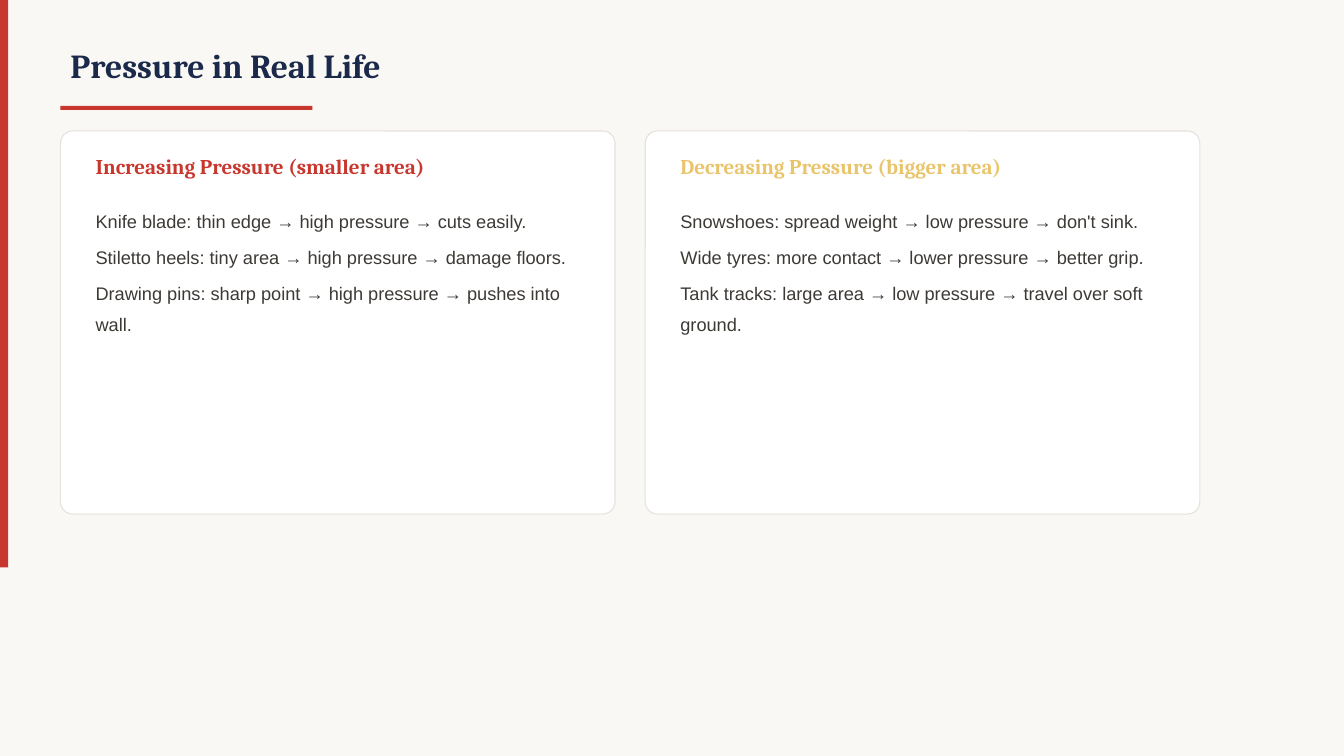
import pptx
import pptx.dml.color
import pptx.enum.shapes
import pptx.enum.text
import pptx.util

CELL = 0.05
LEFT = 12
CARD_TOP = 26
CARD_WIDTH = 110
CARD_HEIGHT = 76
CARD_GAP = 7 - 1
CARD_PAD = 5
RED = "C8372D"

TITLE = {"name": "Cambria", "size": pptx.util.Pt(24), "bold": True}
HEADING = {"name": "Cambria", "size": pptx.util.Pt(15), "bold": True}
BODY = {"name": "Arial", "size": pptx.util.Pt(13)}
BODY_SPACING = {"line_spacing": 1.4, "space_after": pptx.util.Pt(4)}

CARDS = [
    ("Increasing Pressure (smaller area)", RED, [
        "Knife blade: thin edge → high pressure → cuts easily.",
        "Stiletto heels: tiny area → high pressure → damage floors.",
        "Drawing pins: sharp point → high pressure → pushes into wall.",
    ]),
    ("Decreasing Pressure (bigger area)", "E9C46A", [
        "Snowshoes: spread weight → low pressure → don't sink.",
        "Wide tyres: more contact → lower pressure → better grip.",
        "Tank tracks: large area → low pressure → travel over soft ground.",
    ]),
]


def cells(*counts):
    return [pptx.util.Inches(count * CELL) for count in counts]


def apply(target, values):
    for name, value in values.items():
        setattr(target, name, value)


def paint(color_format, color):
    color_format.rgb = pptx.dml.color.RGBColor.from_string(color)


def add_panel(page, kind, area, fill, outline=None):
    panel = page.shapes.add_shape(kind, *cells(*area))
    panel.shadow.inherit = False
    panel.fill.solid()
    paint(panel.fill.fore_color, fill)
    if outline:
        paint(panel.line.color, outline)
        panel.line.width = pptx.util.Pt(0.75)
    else:
        panel.line.fill.background()
    return panel


def add_text(page, area, lines, font, color, anchor, spacing):
    box = page.shapes.add_textbox(*cells(*area))
    apply(box.text_frame, {"word_wrap": True, "vertical_anchor": anchor})
    for index, line in enumerate(lines):
        para = box.text_frame.add_paragraph() if index else box.text_frame.paragraphs[0]
        apply(para, spacing)
        span = para.add_run()
        span.text = line
        apply(span.font, font)
        paint(span.font.color, color)


def add_card(page, left, heading, color, lines):
    anchors = pptx.enum.text.MSO_ANCHOR
    card = add_panel(page, pptx.enum.shapes.MSO_SHAPE.ROUNDED_RECTANGLE,
                     (left, CARD_TOP, CARD_WIDTH, CARD_HEIGHT), "FFFFFF", "E5E2DC")
    card.adjustments[0] = 0.032
    text_left = left + CARD_PAD
    text_width = CARD_WIDTH - 2 * CARD_PAD
    add_text(page, (text_left, CARD_TOP + 3, text_width, 8), [heading],
             HEADING, color, anchors.MIDDLE, {})
    add_text(page, (text_left, CARD_TOP + 13, text_width, 58), lines,
             BODY, "3D3A36", anchors.TOP, BODY_SPACING)


def main():
    deck = pptx.Presentation()
    apply(deck, {"slide_width": pptx.util.Inches(13.33),
                 "slide_height": pptx.util.Inches(7.5)})
    page = deck.slides.add_slide(deck.slide_layouts[6])
    page.background.fill.solid()
    paint(page.background.fill.fore_color, "FAF8F5")

    rectangle = pptx.enum.shapes.MSO_SHAPE.RECTANGLE
    add_panel(page, rectangle, (0, 0, 1.6, 112.6), RED)
    add_text(page, (LEFT, 6, 200, 14), ["Pressure in Real Life"],
             TITLE, "1B2A4A", pptx.enum.text.MSO_ANCHOR.MIDDLE, {})
    add_panel(page, rectangle, (LEFT, 21, 50, 0.8), RED)

    for index, (heading, color, lines) in enumerate(CARDS):
        left = LEFT + index * (CARD_WIDTH + CARD_GAP)
        add_card(page, left, heading, color, lines)

    deck.save("out.pptx")


if __name__ == "__main__":
    main()
